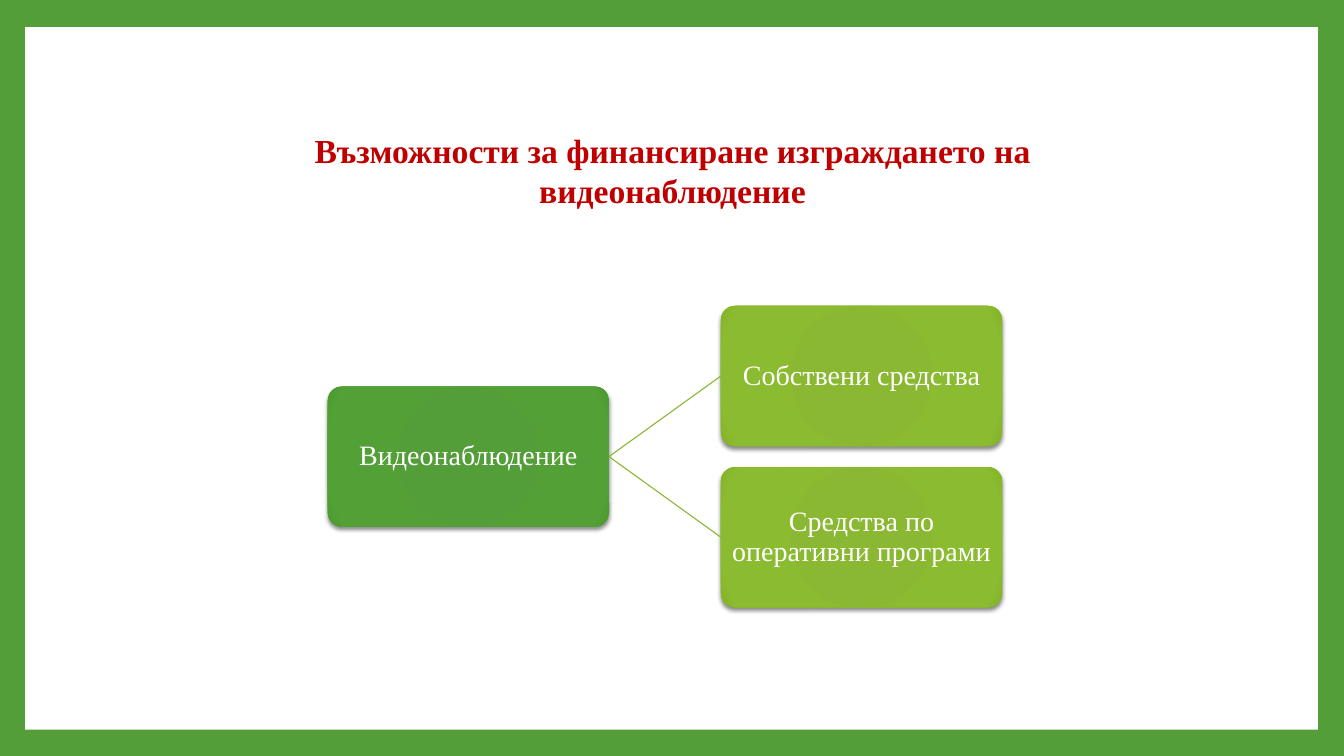
from lxml import etree
from pptx import Presentation
from pptx.dml.color import RGBColor
from pptx.enum.shapes import MSO_CONNECTOR as Connector, MSO_SHAPE as Shape
from pptx.enum.text import MSO_ANCHOR as Anchor, PP_ALIGN as Align
from pptx.oxml import parse_xml
from pptx.oxml.ns import nsdecls, qn
from pptx.util import Inches, Pt

TITLE = "Възможности за финансиране изграждането на видеонаблюдение"
ROOT = "Видеонаблюдение"
SOURCES = ["Собствени средства", "Средства по оперативни програми"]

FONT = "Times New Roman"
GREEN = RGBColor(0x54, 0x9E, 0x39)
LIME = RGBColor(0x8A, 0xB8, 0x33)
RED = RGBColor(0xC0, 0x00, 0x00)
WHITE = RGBColor(0xFF, 0xFF, 0xFF)
GRADIENTS = {
    GREEN: [(0, GREEN), (90, RGBColor(0x53, 0xA1, 0x36)), (100, RGBColor(0x48, 0x99, 0x2B))],
    LIME: [(0, LIME), (90, RGBColor(0x8B, 0xBB, 0x30)), (100, RGBColor(0x81, 0xB3, 0x22))],
}

BOX_WIDTH, BOX_HEIGHT = 2.79, 1.39
ROOT_LEFT, SOURCE_LEFT = 3.25, 7.15
MIDDLE, SOURCE_STEP = 4.53, 1.6


def set_text(shape, text, size, color, bold=False):
    """Write one centred paragraph into a shape."""
    frame = shape.text_frame
    frame.text = text
    frame.word_wrap = True
    paragraph = frame.paragraphs[0]
    paragraph.alignment = Align.CENTER
    font = paragraph.runs[0].font
    font.name, font.size, font.bold = FONT, Pt(size), bold
    font.color.rgb = color
    return frame, paragraph


def add_box(slide, text, left, center, color):
    """Add a rounded box with a radial gradient and a soft shadow."""
    box = slide.shapes.add_shape(Shape.ROUNDED_RECTANGLE, Inches(left), Inches(center - BOX_HEIGHT / 2),
                                 Inches(BOX_WIDTH), Inches(BOX_HEIGHT))
    box.adjustments[0] = 0.1
    box.line.fill.background()
    box.fill.solid()
    box.shadow.inherit = False
    properties = box.element.spPr
    stops = "".join(f'<a:gs pos="{position * 1000}"><a:srgbClr val="{stop}"/></a:gs>'
                    for position, stop in GRADIENTS[color])
    gradient = parse_xml(
        f'<a:gradFill {nsdecls("a")} rotWithShape="1"><a:gsLst>{stops}</a:gsLst><a:path path="circle">'
        '<a:fillToRect l="100000" t="100000" r="100000" b="100000"/></a:path></a:gradFill>')
    properties.replace(properties.find(qn("a:solidFill")), gradient)
    properties.find(qn("a:effectLst")).append(parse_xml(
        f'<a:outerShdw {nsdecls("a")} blurRad="{Pt(3)}" dist="{Pt(2)}" dir="5400000" rotWithShape="0">'
        '<a:srgbClr val="000000"><a:alpha val="45000"/></a:srgbClr></a:outerShdw>'))
    frame, paragraph = set_text(box, text, 20, WHITE)
    frame.vertical_anchor = Anchor.MIDDLE
    frame.margin_left = frame.margin_right = frame.margin_top = frame.margin_bottom = Inches(0.01)
    paragraph.line_spacing = 0.9
    return box


def add_link(slide, start, end):
    """Join the right side of one box to the left side of another."""
    link = slide.shapes.add_connector(Connector.STRAIGHT, 0, 0, 0, 0)
    link.begin_connect(start, 3)
    link.end_connect(end, 1)
    link.line.color.rgb = LIME
    link.line.width = Pt(0.79)
    etree.SubElement(link.element.spPr, qn("a:effectLst"))


def main():
    """Build the slide on video surveillance funding."""
    presentation = Presentation()
    presentation.slide_width, presentation.slide_height = Inches(13.33), Inches(7.5)
    slide = presentation.slides.add_slide(presentation.slide_layouts[5])
    slide.background.fill.solid()
    slide.background.fill.fore_color.rgb = GREEN

    panel = slide.shapes.add_shape(Shape.RECTANGLE, Inches(0.25), Inches(0.27), Inches(12.82), Inches(6.97))
    panel.shadow.inherit = False
    panel.fill.solid()
    panel.fill.fore_color.rgb = WHITE
    panel.line.fill.background()

    title = slide.shapes.title
    slide.shapes.element.remove(panel.element)
    title.element.addprevious(panel.element)
    title.left, title.top, title.width, title.height = Inches(1.67), Inches(0.69), Inches(10), Inches(1.45)
    frame, _ = set_text(title, TITLE, 24, RED, bold=True)
    frame.vertical_anchor = Anchor.BOTTOM

    root = add_box(slide, ROOT, ROOT_LEFT, MIDDLE, GREEN)
    for index, source in enumerate(SOURCES):
        center = MIDDLE + (index - (len(SOURCES) - 1) / 2) * SOURCE_STEP
        add_link(slide, root, add_box(slide, source, SOURCE_LEFT, center, LIME))

    presentation.save("out.pptx")


if __name__ == "__main__":
    main()
